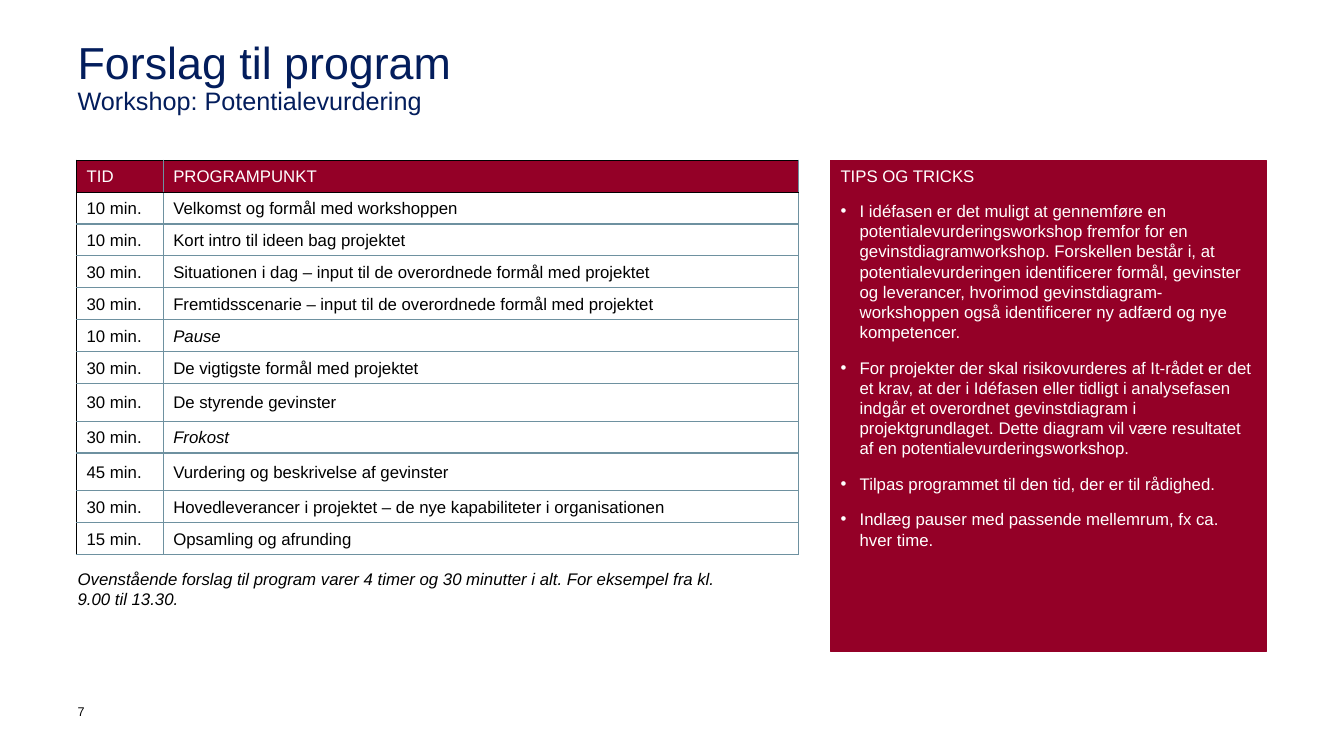
from lxml.etree import SubElement
from pptx import Presentation
from pptx.dml.color import RGBColor
from pptx.enum.shapes import MSO_SHAPE
from pptx.enum.text import MSO_ANCHOR, PP_ALIGN
from pptx.oxml.ns import qn
from pptx.util import Inches, Pt

WIDE, HIGH = Inches(13.333), Inches(7.5)
NAVY, WINE, STEEL = "031D5C", "940027", "6E91A0"
BLACK, WHITE = "000000", "FFFFFF"

# Boxes: left, top, width, height in percent of the slide
LEFT, TOP = 5.78, 21.2
HEAD = (LEFT, 5.33, 88.5, 13.6)
PLAN = (5.7, TOP, 53.7, 51.7)
TIPS = (61.8, TOP, 32.4, 64.93)
NOTE = (LEFT, 75.2, 50.18, 4.53)
PAGE = (LEFT, 93.07, 2.33, 5.2)

ROWS = [
    ("TID", "PROGRAMPUNKT"),
    ("10 min.", "Velkomst og formål med workshoppen"),
    ("10 min.", "Kort intro til ideen bag projektet"),
    ("30 min.", "Situationen i dag – input til de overordnede formål med projektet"),
    ("30 min.", "Fremtidsscenarie – input til de overordnede formål med projektet"),
    ("10 min.", "Pause"),
    ("30 min.", "De vigtigste formål med projektet"),
    ("30 min.", "De styrende gevinster"),
    ("30 min.", "Frokost"),
    ("45 min.", "Vurdering og beskrivelse af gevinster"),
    ("30 min.", "Hovedleverancer i projektet – de nye kapabiliteter i organisationen"),
    ("15 min.", "Opsamling og afrunding"),
]
BREAKS = ("Pause", "Frokost")
TALL = (7, 9)

ADVICE = [
    "I idéfasen er det muligt at gennemføre en potentialevurderingsworkshop "
    "fremfor for en gevinstdiagramworkshop. Forskellen består i, at "
    "potentialevurderingen identificerer formål, gevinster og leverancer, "
    "hvorimod gevinstdiagram- workshoppen også identificerer ny adfærd og nye "
    "kompetencer.",
    "For projekter der skal risikovurderes af It-rådet er det et krav, at der i "
    "Idéfasen eller tidligt i analysefasen indgår et overordnet gevinstdiagram i "
    "projektgrundlaget. Dette diagram vil være resultatet af en "
    "potentialevurderingsworkshop.",
    "Tilpas programmet til den tid, der er til rådighed.",
    "Indlæg pauser med passende mellemrum, fx ca. hver time.",
]


def paint(tone):
    return RGBColor.from_string(tone)


def place(box):
    x, y, w, h = box
    return [int(part / 100 * side)
            for part, side in zip((x, y, w, h), (WIDE, HIGH, WIDE, HIGH))]


def write(para, text, size=12, tone=BLACK, slant=False):
    run = para.add_run()
    run.text = text
    font = run.font
    font.name, font.size, font.italic = "Arial", Pt(size), slant
    font.color.rgb = paint(tone)


def label(slide, box):
    frame = slide.shapes.add_textbox(*place(box)).text_frame
    frame.word_wrap = True
    frame.margin_left = frame.margin_right = 0
    frame.margin_top = frame.margin_bottom = 0
    return frame.paragraphs[0]


def edge(cell, side, tone):
    line = SubElement(cell._tc.get_or_add_tcPr(), qn(f"a:ln{side}"), w=str(Pt(1)))
    fill = SubElement(line, qn("a:solidFill"))
    SubElement(fill, qn("a:srgbClr"), val=tone)


def title(slide, box):
    para = label(slide, box)
    para.line_spacing = 0.9
    write(para, "Forslag til program", 32, NAVY)
    para.add_line_break()
    write(para, "Workshop: Potentialevurdering", 18, NAVY)


def plan(slide, box):
    x, y, w, h = place(box)
    table = slide.shapes.add_table(len(ROWS), 2, x, y, w, h).table
    table.first_row = table.horz_banding = False
    for col, share in zip(table.columns, (0.12, 0.88)):
        col.width = int(w * share)
    for r, texts in enumerate(ROWS):
        table.rows[r].height = int(HIGH * (0.05 if r in TALL else 0.0417))
        for c, text in enumerate(texts):
            cell = table.cell(r, c)
            # Borders come before the fill
            edge(cell, "L", STEEL if c else BLACK)
            edge(cell, "R", STEEL)
            edge(cell, "T", STEEL if r > 1 else BLACK)
            edge(cell, "B", STEEL if r else BLACK)
            if r:
                cell.fill.background()
                cell.vertical_anchor = MSO_ANCHOR.MIDDLE
            else:
                cell.fill.solid()
                cell.fill.fore_color.rgb = paint(WINE)
            para = cell.text_frame.paragraphs[0]
            para.line_spacing = 1.08
            write(para, text, 12, BLACK if r else WHITE, text in BREAKS)


def tips(slide, box):
    panel = slide.shapes.add_shape(MSO_SHAPE.RECTANGLE, *place(box))
    panel.shadow.inherit = False
    panel.fill.solid()
    panel.fill.fore_color.rgb = panel.line.color.rgb = paint(WINE)
    panel.line.width = Pt(0.5)
    frame = panel.text_frame
    frame.word_wrap = True
    frame.vertical_anchor = MSO_ANCHOR.TOP
    para = frame.paragraphs[0]
    para.alignment = PP_ALIGN.LEFT
    write(para, "TIPS OG TRICKS", 12, WHITE)
    for text in ADVICE:
        para = frame.add_paragraph()
        para.alignment = PP_ALIGN.LEFT
        para.space_before = Pt(11)
        # Hanging bullet
        props = para._p.get_or_add_pPr()
        hang = Inches(0.19)
        props.set("marL", str(hang))
        props.set("indent", str(-hang))
        SubElement(props, qn("a:buFont"), typeface="Arial")
        SubElement(props, qn("a:buChar"), char="•")
        write(para, text, 12, WHITE)


def note(slide, box):
    write(label(slide, box),
          "Ovenstående forslag til program varer 4 timer og 30 minutter i alt. "
          "For eksempel fra kl. 9.00 til 13.30.", slant=True)


def page(slide, box):
    write(label(slide, box), "7", 9)


def main():
    deck = Presentation()
    deck.slide_width, deck.slide_height = WIDE, HIGH
    slide = deck.slides.add_slide(deck.slide_layouts[6])
    title(slide, HEAD)
    plan(slide, PLAN)
    tips(slide, TIPS)
    note(slide, NOTE)
    page(slide, PAGE)
    deck.save("out.pptx")


if __name__ == "__main__":
    main()
